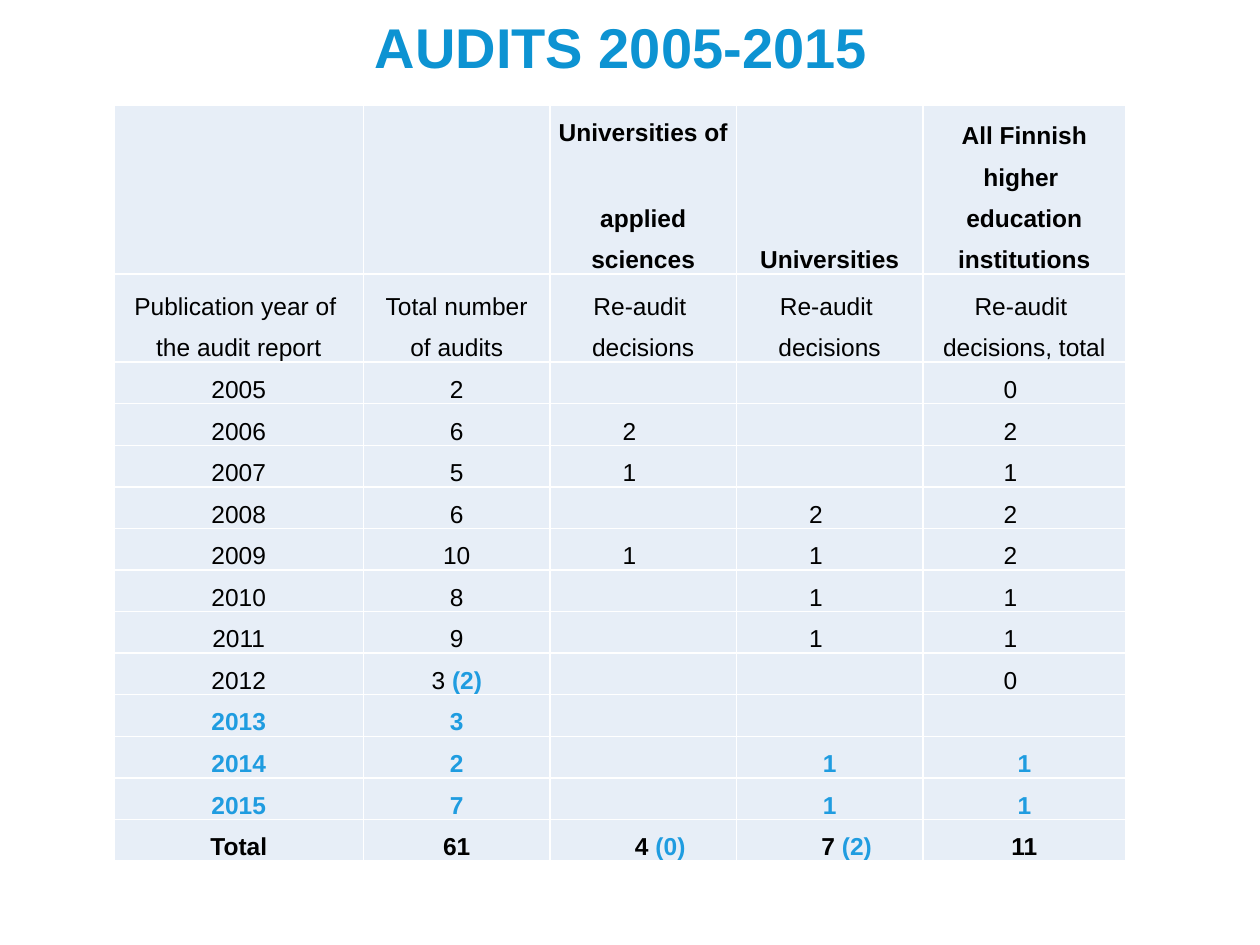
from lxml.etree import SubElement
from pptx import Presentation
from pptx.dml.color import RGBColor
from pptx.enum.text import MSO_ANCHOR, PP_ALIGN
from pptx.oxml.ns import qn
from pptx.util import Inches, Pt

COLORS = {
    "title": "0D93D2",
    "accent": "1F9CE0",
    "text": "000000",
    "cell": "E7EEF7",
    "border": "FFFFFF",
}
FONT = "Arial"
INSET = 0.05
SHIFT = 0.22
COLUMN_WIDTHS = [1.98, 1.48, 1.48, 1.48, 1.61]
HEADINGS = [
    ["", "", "Universities of \napplied sciences", "Universities",
     "All Finnish higher \neducation institutions"],
    ["Publication year of \nthe audit report", "Total number\nof audits",
     "Re-audit \ndecisions", "Re-audit \ndecisions", "Re-audit \ndecisions, total"],
]
EARLY_YEARS = [
    ["2005", "2", "", "", "0"],
    ["2006", "6", "2", "", "2"],
    ["2007", "5", "1", "", "1"],
    ["2008", "6", "", "2", "2"],
    ["2009", "10", "1", "1", "2"],
    ["2010", "8", "", "1", "1"],
    ["2011", "9", "", "1", "1"],
    ["2012", "3 (2)", "", "", "0"],
]
LATE_YEARS = [
    ["2013", "3", "", "", ""],
    ["2014", "2", "", "1", "1"],
    ["2015", "7", "", "1", "1"],
]
TOTALS = ["Total", "61", "4 (0)", "7 (2)", "11"]


def add_span(para, text, size=14, color="text", bold=False):
    for number, line in enumerate(text.split("\n")):
        if number:
            para.add_line_break()
            SubElement(para._p[-1], qn("a:rPr"), sz=str(size * 100))
        span = para.add_run()
        span.text = line
        span.font.name = FONT
        span.font.size = Pt(size)
        span.font.bold = bold
        span.font.color.rgb = RGBColor.from_string(COLORS[color])


class SlideBuilder:
    def __init__(self, deck):
        self.deck = deck
        self.page = deck.slides.add_slide(deck.slide_layouts[5])

    def area(self, left, top, width, height):
        wide, high = self.deck.slide_width, self.deck.slide_height
        return int(left * wide), int(top * high), int(width * wide), int(height * high)

    def title(self, text, *shares):
        box = self.page.shapes.title
        box.left, box.top, box.width, box.height = self.area(*shares)
        frame = box.text_frame
        frame.vertical_anchor = MSO_ANCHOR.TOP
        frame.margin_top = Inches(INSET)
        para = frame.paragraphs[0]
        para.alignment = PP_ALIGN.CENTER
        add_span(para, text, size=32, color="title", bold=True)

    def table(self, row_heights, column_widths, *shares):
        frame = self.page.shapes.add_table(
            len(row_heights), len(column_widths), *self.area(*shares))
        table = frame.table
        for row, height in zip(table.rows, row_heights):
            row.height = Inches(height)
        for column, width in zip(table.columns, column_widths):
            column.width = Inches(width)
        frame.height = self.area(*shares)[3]
        return table

    def cell(self, cell, text, color="text", bold=False, left=0, right=0):
        cell.fill.solid()
        cell.fill.fore_color.rgb = RGBColor.from_string(COLORS["cell"])
        cell.vertical_anchor = MSO_ANCHOR.BOTTOM
        cell.margin_left, cell.margin_right = Inches(INSET + left), Inches(INSET + right)
        cell.margin_top = cell.margin_bottom = 0
        self.borders(cell)
        if not text:
            return
        para = cell.text_frame.paragraphs[0]
        para.alignment = PP_ALIGN.CENTER
        para.line_spacing = 1.5
        main, bracket, note = text.partition("(")
        add_span(para, main, color=color, bold=bold)
        if bracket:
            add_span(para, bracket + note, color="accent", bold=True)

    def borders(self, cell):
        properties = cell._tc.get_or_add_tcPr()
        for position, side in enumerate(("a:lnL", "a:lnR", "a:lnT", "a:lnB")):
            line = properties.makeelement(qn(side), {"w": str(Pt(1))})
            fill = SubElement(line, qn("a:solidFill"))
            SubElement(fill, qn("a:srgbClr"), val=COLORS["border"])
            properties.insert(position, line)


def main():
    deck = Presentation()
    deck.slide_width, deck.slide_height = Inches(10), Inches(7.5)
    builder = SlideBuilder(deck)
    builder.title("AUDITS 2005-2015", 0.043, 0.007, 0.9, 0.11)

    rows = [(HEADINGS[0], {"bold": True}), (HEADINGS[1], {})]
    rows += [(values, {}) for values in EARLY_YEARS]
    rows += [(values, {"color": "accent", "bold": True}) for values in LATE_YEARS]
    rows.append((TOTALS, {"bold": True}))

    heights = [1.2, 0.7] + [0.33] * (len(rows) - len(HEADINGS))
    table = builder.table(heights, COLUMN_WIDTHS, 0.0905, 0.1115, 0.803, 0.84)
    for row, (values, style) in enumerate(rows):
        for column, value in enumerate(values):
            shift = {}
            if column > 1 and values in EARLY_YEARS:
                shift = {"right": SHIFT}
            elif column > 1 and "(" in value:
                shift = {"left": SHIFT + INSET}
            builder.cell(table.cell(row, column), value, **style, **shift)
    deck.save("out.pptx")


if __name__ == "__main__":
    main()
